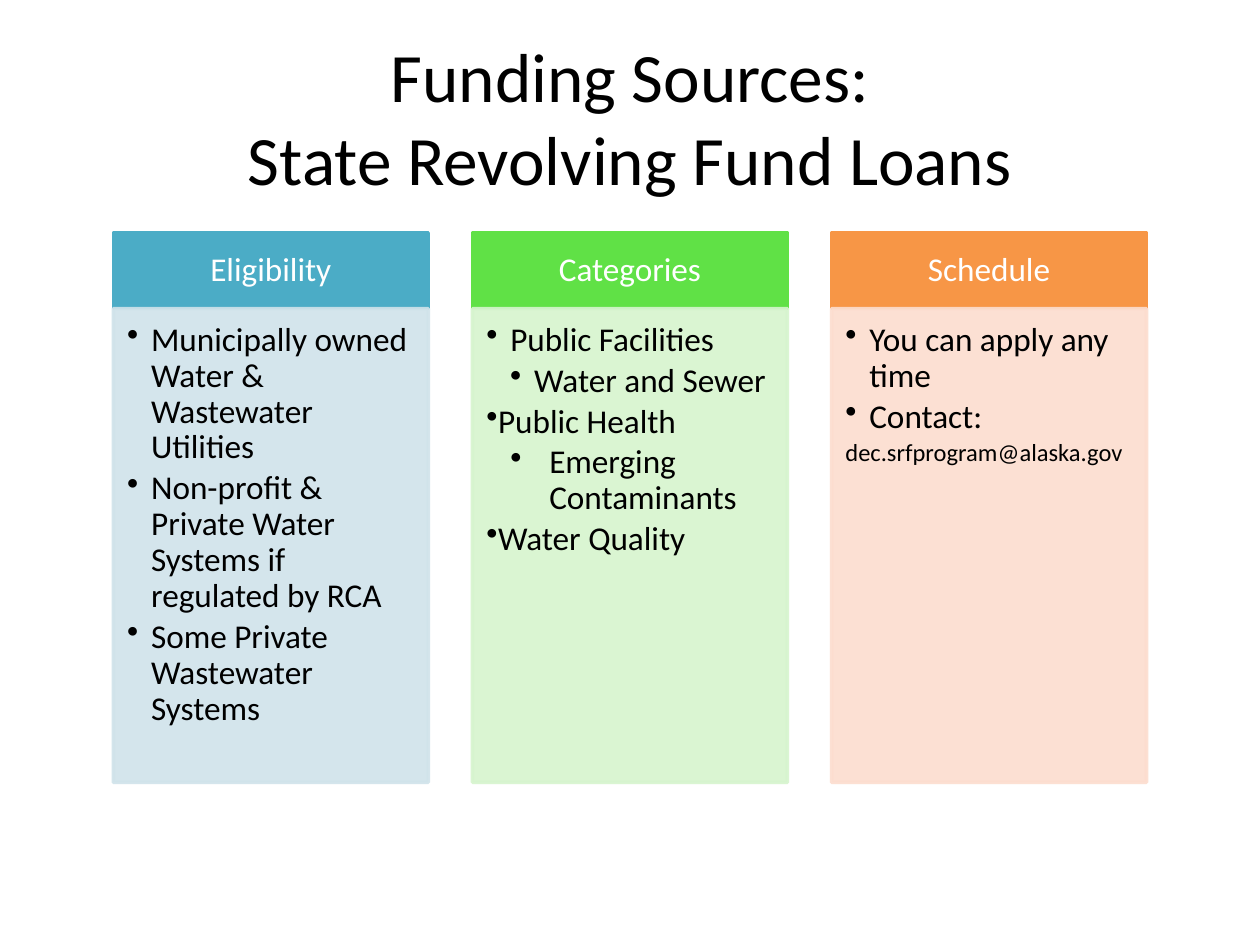
from dataclasses import dataclass

from lxml.etree import SubElement
from pptx import Presentation
from pptx.dml.color import RGBColor
from pptx.enum.shapes import MSO_SHAPE as Shape
from pptx.enum.text import MSO_ANCHOR as Anchor, MSO_AUTO_SIZE as AutoSize, PP_ALIGN as Align
from pptx.oxml.ns import qn
from pptx.util import Inches, Pt


@dataclass(frozen=True)
class Theme:
    font: str = "Calibri"
    ink: str = "000000"
    header_ink: str = "FFFFFF"
    title_size: float = 39.6
    body_size: float = 19
    contact_size: float = 14
    border: float = 2
    panel_opacity: int = 90


@dataclass(frozen=True)
class Item:
    text: str
    level: int = 1
    margin: float = 0.19
    hanging: float = 0.19
    bullet: bool = True
    size: float = Theme.body_size


@dataclass(frozen=True)
class Column:
    heading: str
    accent: str
    tint: str
    items: tuple[Item, ...]


THEME = Theme()
LEFT, TOP, WIDTH, PITCH = 0.9, 1.85, 2.5, 2.85
HEADER_HEIGHT, PANEL_HEIGHT = 0.6, 3.76
HEADER_INSETS = (0.15, 0.08, 0.15, 0.08)
PANEL_INSETS = (0.11, 0.11, 0.15, 0.17)

COLUMNS = (
    Column("Eligibility", "4BACC6", "D0E3EA", (
        Item("Municipally owned Water & Wastewater Utilities"),
        Item("Non-profit & Private Water Systems if regulated by RCA"),
        Item("Some Private Wastewater Systems"),
    )),
    Column("Categories", "60E146", "D6F4CE", (
        Item("Public Facilities"),
        Item("Water and Sewer", level=2, margin=0.38),
        Item("Public Health", margin=0, hanging=0.31),
        Item("Emerging Contaminants", level=2, margin=0.5, hanging=0.31),
        Item("Water Quality", margin=0, hanging=0.31),
    )),
    Column("Schedule", "F79646", "FCDDCF", (
        Item("You can apply any time"),
        Item("Contact:"),
        Item("dec.srfprogram@alaska.gov", margin=0, hanging=0, bullet=False,
             size=THEME.contact_size),
    )),
)


def write(para, text: str, *, size: float = THEME.body_size, color: str = THEME.ink,
          align=Align.LEFT, spacing: float = 0.9, after: float = 0) -> None:
    para.text = text
    para.alignment = align
    para.line_spacing = spacing
    para.space_before = Pt(0)
    para.space_after = Pt(after)
    for span in para.runs:
        span.font.name = THEME.font
        span.font.size = Pt(size)
        span.font.color.rgb = RGBColor.from_string(color)


def add_box(page, left: float, top: float, height: float, color: str,
            insets: tuple[float, ...], anchor, opacity: int = 100):
    box = page.shapes.add_shape(
        Shape.RECTANGLE, Inches(left), Inches(top), Inches(WIDTH), Inches(height))
    box.shadow.inherit = False
    for fill in (box.fill, box.line.fill):
        fill.solid()
        fill.fore_color.rgb = RGBColor.from_string(color)
    box.line.width = Pt(THEME.border)
    if opacity < 100:
        for tone in box.element.spPr.iter(qn("a:srgbClr")):
            SubElement(tone, qn("a:alpha"), val=str(opacity * 1000))
    frame = box.text_frame
    frame.word_wrap = True
    frame.vertical_anchor = anchor
    (frame.margin_left, frame.margin_top,
     frame.margin_right, frame.margin_bottom) = map(Inches, insets)
    return box


def add_item(para, item: Item) -> None:
    para.level = item.level
    properties = para._p.get_or_add_pPr()
    properties.set("marL", str(Inches(item.margin)))
    properties.set("indent", str(-Inches(item.hanging)))
    if item.bullet:
        SubElement(properties, qn("a:buChar"), char="•")
    else:
        SubElement(properties, qn("a:buNone"))
    write(para, item.text, size=item.size, after=item.size * 0.15)


def add_column(page, column: Column, left: float) -> None:
    header = add_box(page, left, TOP, HEADER_HEIGHT, column.accent,
                     HEADER_INSETS, Anchor.MIDDLE)
    write(header.text_frame.paragraphs[0], column.heading,
          color=THEME.header_ink, align=Align.CENTER)
    panel = add_box(page, left, TOP + HEADER_HEIGHT, PANEL_HEIGHT, column.tint,
                    PANEL_INSETS, Anchor.TOP, THEME.panel_opacity)
    frame = panel.text_frame
    for index, item in enumerate(column.items):
        add_item(frame.add_paragraph() if index else frame.paragraphs[0], item)


def add_title(page, text: str) -> None:
    title = page.shapes.title
    title.left, title.top = Inches(0.5), Inches(0.3)
    title.width, title.height = Inches(9), Inches(1.25)
    frame = title.text_frame
    frame.auto_size = AutoSize.NONE
    frame.word_wrap = True
    frame.vertical_anchor = Anchor.MIDDLE
    write(frame.paragraphs[0], text, size=THEME.title_size,
          align=Align.CENTER, spacing=1.0)


def main() -> None:
    deck = Presentation()
    deck.slide_width, deck.slide_height = Inches(10), Inches(7.5)
    page = deck.slides.add_slide(deck.slide_layouts[5])
    add_title(page, "Funding Sources:\vState Revolving Fund Loans")
    for index, column in enumerate(COLUMNS):
        add_column(page, column, LEFT + index * PITCH)
    deck.save("out.pptx")


if __name__ == "__main__":
    main()
